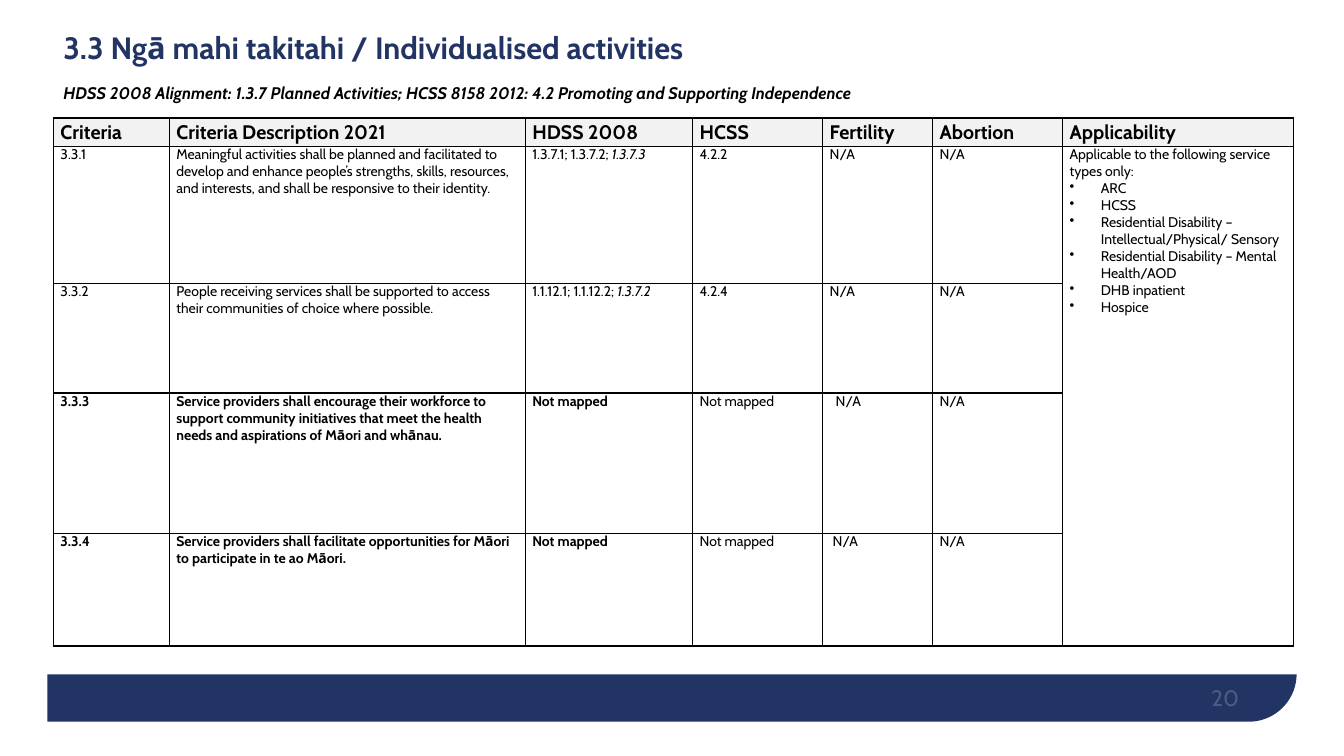
from dataclasses import dataclass

from lxml import etree
from pptx import Presentation
from pptx.dml.color import RGBColor
from pptx.enum.shapes import MSO_SHAPE
from pptx.enum.text import MSO_ANCHOR, PP_ALIGN
from pptx.oxml.ns import qn
from pptx.util import Pt

PX = 9144  # EMU per px, 100 px to the inch
RECTANGLE = MSO_SHAPE.RECTANGLE
ONE_ROUND_CORNER = MSO_SHAPE.ROUND_1_RECTANGLE
TOP, MIDDLE, BOTTOM = MSO_ANCHOR.TOP, MSO_ANCHOR.MIDDLE, MSO_ANCHOR.BOTTOM
LEFT, RIGHT = PP_ALIGN.LEFT, PP_ALIGN.RIGHT


@dataclass(frozen=True)
class Theme:
    font: str = "Cabin"
    navy: str = "213463"
    black: str = "000000"
    white: str = "FFFFFF"
    header_fill: str = "F2F2F2"
    title_size: int = 22
    page_size: int = 16
    header_size: int = 14
    subtitle_size: int = 12
    body_size: int = 10
    border: int = 1


class SlideBuilder:
    def __init__(self, slide, theme):
        self.slide = slide
        self.theme = theme

    def shape(self, kind, box, color):
        shape = self.slide.shapes.add_shape(kind, *(n * PX for n in box))
        shape.shadow.inherit = False
        shape.fill.solid()
        shape.fill.fore_color.rgb = RGBColor.from_string(color)
        shape.line.fill.background()
        return shape

    def run(self, paragraph, text, size, color=None, bold=False, italic=False):
        run = paragraph.add_run()
        run.text = text
        font = run.font
        font.name, font.size = self.theme.font, Pt(size)
        font.bold, font.italic = bold, italic
        font.color.rgb = RGBColor.from_string(color or self.theme.black)
        return run

    def text_box(self, box, anchor, inset_x, inset_y):
        frame = self.slide.shapes.add_textbox(*(n * PX for n in box)).text_frame
        frame.word_wrap = True
        frame.vertical_anchor = anchor
        frame.margin_left = frame.margin_right = inset_x * PX
        frame.margin_top = frame.margin_bottom = inset_y * PX
        return frame

    def indent(self, paragraph, left, bullet=False):
        properties = paragraph._p.get_or_add_pPr()
        properties.set("marL", str(left * PX))
        if bullet:
            properties.set("indent", str(-left * PX))
            etree.SubElement(properties, qn("a:buChar"), char="•")

    def table(self, left, top, widths, heights):
        table = self.slide.shapes.add_table(
            len(heights), len(widths), left * PX, top * PX,
            sum(widths) * PX, sum(heights) * PX).table
        table.first_row = table.horz_banding = False
        for column, width in zip(table.columns, widths):
            column.width = width * PX
        for row, height in zip(table.rows, heights):
            row.height = height * PX
        for cell in table.iter_cells():
            cell.margin_left = cell.margin_right = 7 * PX
            cell.margin_top = cell.margin_bottom = 0
            cell.vertical_anchor = TOP
            cell.fill.background()
            self.borders(cell)
        return table

    def borders(self, cell):
        properties = cell._tc.get_or_add_tcPr()
        for position, side in enumerate(("lnL", "lnR", "lnT", "lnB")):
            line = etree.Element(qn(f"a:{side}"), w=str(Pt(self.theme.border)))
            fill = etree.SubElement(line, qn("a:solidFill"))
            etree.SubElement(fill, qn("a:srgbClr"), val=self.theme.black)
            properties.insert(position, line)

    def header_cell(self, cell, text):
        cell.fill.solid()
        cell.fill.fore_color.rgb = RGBColor.from_string(self.theme.header_fill)
        cell.vertical_anchor = MIDDLE
        self.run(cell.text_frame.paragraphs[0], text,
                 self.theme.header_size, bold=True)

    def body_cell(self, cell, text, bold=False, italic_tail="", indent=0):
        paragraph = cell.text_frame.paragraphs[0]
        if indent:
            self.indent(paragraph, indent)
        self.run(paragraph, text, self.theme.body_size, bold=bold)
        if italic_tail:
            self.run(paragraph, italic_tail, self.theme.body_size, italic=True)


HEADERS = ("Criteria", "Criteria Description 2021", "HDSS 2008", "HCSS",
           "Fertility", "Abortion", "Applicability")
COLUMN_WIDTHS = (115, 353, 166, 129, 109, 129, 229)
ROW_HEIGHTS = (28, 136, 109, 139, 112)

# criterion, description, HDSS, HDSS in italics, HCSS, new in 2021, Fertility indent
CRITERIA = (
    ("3.3.1", "Meaningful activities shall be planned and facilitated to develop "
     "and enhance people’s strengths, skills, resources, and interests, and shall "
     "be responsive to their identity.",
     "1.3.7.1; 1.3.7.2; ", "1.3.7.3", "4.2.2", False, 0),
    ("3.3.2", "People receiving services shall be supported to access their "
     "communities of choice where possible.",
     "1.1.12.1; 1.1.12.2; ", "1.3.7.2", "4.2.4", False, 0),
    ("3.3.3", "Service providers shall encourage their workforce to support "
     "community initiatives that meet the health needs and aspirations of Māori "
     "and whānau.", "Not mapped", "", "Not mapped", True, 6),
    ("3.3.4", "Service providers shall facilitate opportunities for Māori to "
     "participate in te ao Māori.", "Not mapped", "", "Not mapped", True, 3),
)
SERVICE_TYPES = ("ARC", "HCSS",
                 "Residential Disability –Intellectual/Physical/ Sensory",
                 "Residential Disability – Mental Health/AOD",
                 "DHB inpatient", "Hospice")


def main():
    theme = Theme()
    deck = Presentation()
    deck.slide_width, deck.slide_height = 1333 * PX, 750 * PX
    builder = SlideBuilder(deck.slides.add_slide(deck.slide_layouts[6]), theme)

    # Footer band: the navy panel shows below the white page area
    panel = builder.shape(ONE_ROUND_CORNER, (47, 37, 1239, 679), theme.navy)
    panel.adjustments[0] = 0.07
    panel.rotation = 180
    panel._element.spPr.find(qn("a:xfrm")).set("flipH", "1")
    builder.shape(RECTANGLE, (0, 0, 1333, 669), theme.white)

    # Page number
    page = builder.text_box((929, 665, 300, 40), BOTTOM, 0, 0).paragraphs[0]
    page.alignment = RIGHT
    number = builder.run(page, "20", theme.page_size, theme.white)
    tint = number._r.rPr.find(f"{qn('a:solidFill')}/{qn('a:srgbClr')}")
    etree.SubElement(tint, qn("a:alpha"), val="20000")

    # Title and alignment line
    heading = builder.text_box((53, 25, 1202, 85), MIDDLE, 10, 5)
    title, alignment = heading.paragraphs[0], heading.add_paragraph()
    for line in (title, alignment):
        line.alignment = LEFT
        line.line_spacing = 0.9
    alignment.space_before = Pt(13)
    builder.run(title, "3.3 Ngā mahi takitahi / Individualised activities",
                theme.title_size, theme.navy, bold=True)
    builder.run(alignment, "HDSS 2008 Alignment: 1.3.7 Planned Activities; "
                "HCSS 8158 2012: 4.2 Promoting and Supporting Independence",
                theme.subtitle_size, bold=True, italic=True)

    # Criteria table
    table = builder.table(53, 117, COLUMN_WIDTHS, ROW_HEIGHTS)
    for column, header in enumerate(HEADERS):
        builder.header_cell(table.cell(0, column), header)
    for row, criterion in enumerate(CRITERIA, start=1):
        code, description, hdss, hdss_italic, hcss, new, indent = criterion
        builder.body_cell(table.cell(row, 0), code, new)
        builder.body_cell(table.cell(row, 1), description, new)
        builder.body_cell(table.cell(row, 2), hdss, new, hdss_italic)
        builder.body_cell(table.cell(row, 3), hcss)
        builder.body_cell(table.cell(row, 4), "N/A", indent=indent)
        builder.body_cell(table.cell(row, 5), "N/A")

    # Applicability, one cell for all criteria
    applicability = table.cell(1, 6)
    applicability.merge(table.cell(len(CRITERIA), 6))
    builder.body_cell(applicability, "Applicable to the following service types only:")
    for service in SERVICE_TYPES:
        item = applicability.text_frame.add_paragraph()
        builder.indent(item, 31, bullet=True)
        builder.run(item, service, theme.body_size)

    deck.save("out.pptx")


if __name__ == "__main__":
    main()
